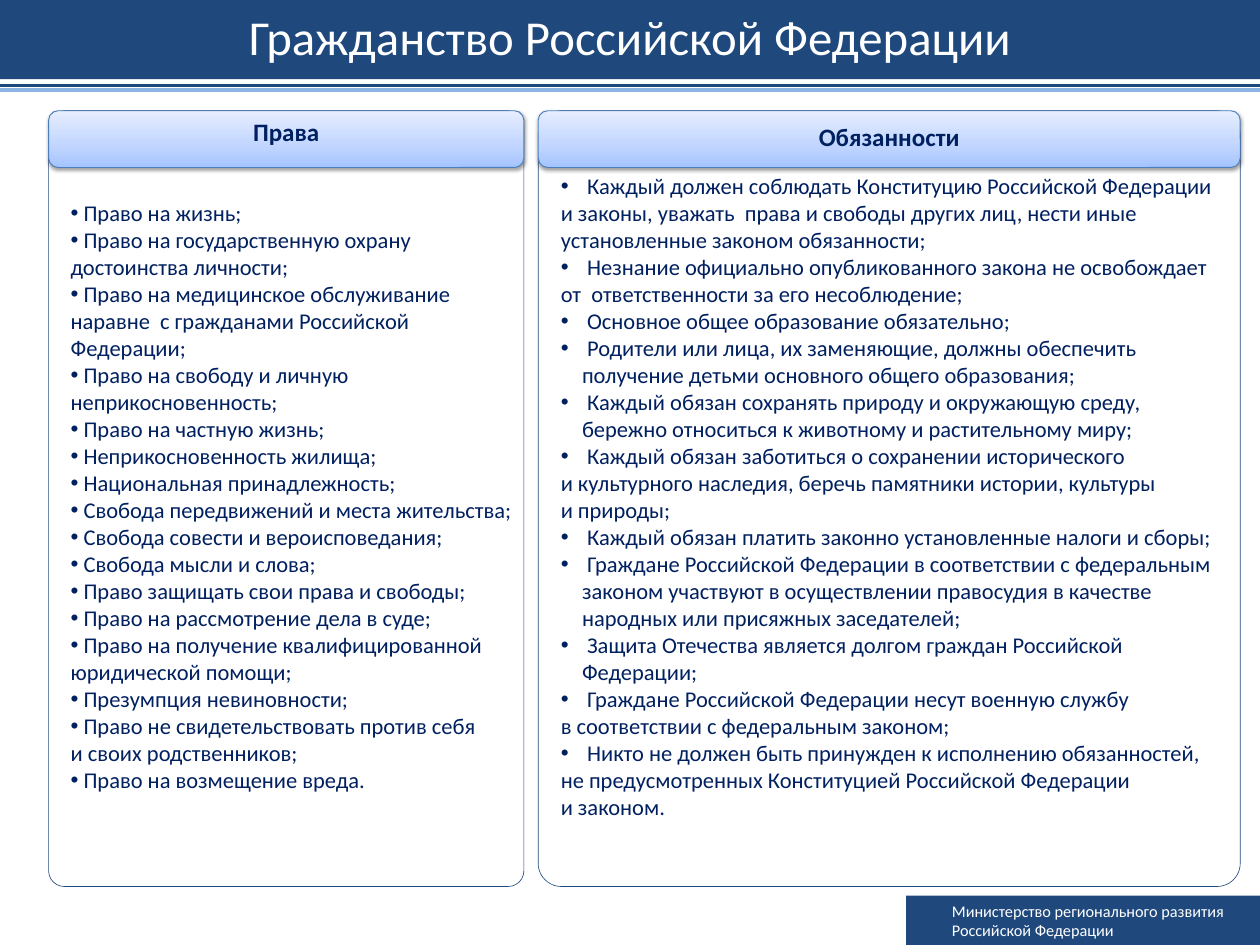
from lxml import etree
from pptx import Presentation
from pptx.dml.color import RGBColor
from pptx.enum.shapes import MSO_CONNECTOR, MSO_SHAPE
from pptx.enum.text import MSO_ANCHOR, MSO_AUTO_SIZE, PP_ALIGN
from pptx.oxml.ns import qn
from pptx.util import Pt

CENTER, LEFT = PP_ALIGN.CENTER, PP_ALIGN.LEFT
MIDDLE, TOP = MSO_ANCHOR.MIDDLE, MSO_ANCHOR.TOP
RECTANGLE, ROUNDED = MSO_SHAPE.RECTANGLE, MSO_SHAPE.ROUNDED_RECTANGLE

FONT = "Calibri"
COLORS = {
    "navy": "1F497D", "sky": "8EB4E3", "text": "002060", "white": "FFFFFF",
    "header_line": "4B7EBC", "shadow": "000000",
}
HEADER_GRADIENT = [(0, "A4C4FF"), (35, "BFD4FF"), (100, "E6EEFF")]

# Content: list items are (text, has bullet)
TITLE = "Гражданство Российской Федерации"
MINISTRY = "Министерство регионального развития Российской Федерации"
RIGHTS = [
    ("Право на жизнь;", True),
    ("Право на государственную охрану достоинства личности;", True),
    ("Право на медицинское обслуживание наравне  с гражданами Российской Федерации;", True),
    ("Право на свободу и личную неприкосновенность;", True),
    ("Право на частную жизнь;", True),
    ("Неприкосновенность жилища;", True),
    ("Национальная принадлежность;", True),
    ("Свобода передвижений и места жительства;", True),
    ("Свобода совести и вероисповедания;", True),
    ("Свобода мысли и слова;", True),
    ("Право защищать свои права и свободы;", True),
    ("Право на рассмотрение дела в суде;", True),
    ("Право на получение квалифицированной юридической помощи;", True),
    ("Презумпция невиновности;", True),
    ("Право не свидетельствовать против себя", True),
    ("и своих родственников;", False),
    ("Право на возмещение вреда.", True),
]
DUTIES = [
    ("Каждый должен соблюдать Конституцию Российской Федерации", True),
    ("и законы, уважать  права и свободы других лиц, нести иные установленные законом обязанности;", False),
    ("Незнание официально опубликованного закона не освобождает", True),
    ("от  ответственности за его несоблюдение;", False),
    ("Основное общее образование обязательно;", True),
    ("Родители или лица, их заменяющие, должны обеспечить получение детьми основного общего образования;", True),
    ("Каждый обязан сохранять природу и окружающую среду, бережно относиться к животному и растительному миру;", True),
    ("Каждый обязан заботиться о сохранении исторического", True),
    ("и культурного наследия, беречь памятники истории, культуры", False),
    ("и природы;", False),
    ("Каждый обязан платить законно установленные налоги и сборы;", True),
    ("Граждане Российской Федерации в соответствии с федеральным законом участвуют в осуществлении "
     "правосудия в качестве народных или присяжных заседателей;", True),
    ("Защита Отечества является долгом граждан Российской Федерации;", True),
    ("Граждане Российской Федерации несут военную службу", True),
    ("в соответствии с федеральным законом;", False),
    ("Никто не должен быть принужден к исполнению обязанностей,", True),
    ("не предусмотренных Конституцией Российской Федерации", False),
    ("и законом.", False),
]

# Layout in points
SLIDE_WIDTH, SLIDE_HEIGHT = 1008, 756
PANEL_TOP, PANEL_HEIGHT, HEADER_HEIGHT = 88.6, 620.6, 45.4
COLUMNS = [
    {"header": "Права", "left": 38.9, "width": 380.2, "spacing": 12, "items": RIGHTS,
     "list_box": (49.3, 155.8, 380.2, 540), "hanging": 0},
    {"header": "Обязанности", "left": 430.6, "width": 561.6, "spacing": 19.6, "items": DUTIES,
     "list_box": (441.4, 133.9, 544.3, 560), "hanging": 17},
]
RULES = [(68.4, "navy"), (72, "sky")]


def color(name):
    return RGBColor.from_string(COLORS[name])


def place(shape, left, top, width, height):
    shape.left, shape.top, shape.width, shape.height = map(Pt, (left, top, width, height))


def add_box(slide, kind, box, fill=None, line=None, line_width=0.5, adjustment=None):
    shape = slide.shapes.add_shape(kind, *map(Pt, box))
    shape.shadow.inherit = False
    if adjustment is not None:
        shape.adjustments[0] = adjustment
    if fill:
        shape.fill.solid()
        shape.fill.fore_color.rgb = color(fill)
    else:
        shape.fill.background()
    if line:
        shape.line.color.rgb = color(line)
        shape.line.width = Pt(line_width)
    else:
        shape.line.fill.background()
    return shape


def prepare_frame(shape, anchor=TOP, insets=(7.2, 3.6)):
    frame = shape.text_frame
    frame.word_wrap = True
    frame.auto_size = MSO_AUTO_SIZE.NONE
    frame.vertical_anchor = anchor
    frame.margin_left = frame.margin_right = Pt(insets[0])
    frame.margin_top = frame.margin_bottom = Pt(insets[1])
    return frame


def write(paragraph, text, size=18, tint="text", bold=False, align=LEFT,
          spacing=None, margin=0, indent=0, bullet=False):
    paragraph.alignment = align
    paragraph.space_before = Pt(0)
    if spacing:
        paragraph.line_spacing = Pt(spacing)
    properties = paragraph._p.get_or_add_pPr()
    properties.set("marL", str(Pt(margin)))
    properties.set("indent", str(Pt(indent)))
    if bullet:
        etree.SubElement(properties, qn("a:buFont"), typeface="Arial")
        etree.SubElement(properties, qn("a:buChar"), char="•")
    else:
        etree.SubElement(properties, qn("a:buNone"))
    run = paragraph.add_run()
    run.text = text
    run.font.name, run.font.size, run.font.bold = FONT, Pt(size), bold
    run.font.color.rgb = color(tint)


def style_header(shape):
    shape.fill.gradient()
    shape.fill.gradient_angle = 90
    properties = shape._element.spPr
    stops = properties.find(".//" + qn("a:gsLst"))
    for stop in list(stops):
        stops.remove(stop)
    for position, value in HEADER_GRADIENT:
        stop = etree.SubElement(stops, qn("a:gs"), pos=str(position * 1000))
        etree.SubElement(stop, qn("a:srgbClr"), val=value)
    shadow = etree.SubElement(properties.find(qn("a:effectLst")), qn("a:outerShdw"),
                              blurRad=str(Pt(3.1)), dist=str(Pt(1.6)), dir="5400000", rotWithShape="0")
    tint = etree.SubElement(shadow, qn("a:srgbClr"), val=COLORS["shadow"])
    etree.SubElement(tint, qn("a:alpha"), val="38000")


def main():
    presentation = Presentation()
    presentation.slide_width, presentation.slide_height = Pt(SLIDE_WIDTH), Pt(SLIDE_HEIGHT)
    slide = presentation.slides.add_slide(presentation.slide_layouts[3])
    title, *lists = slide.placeholders

    # Title band and the rules below it
    place(title, 0, 0, SLIDE_WIDTH, 63.4)
    title.fill.solid()
    title.fill.fore_color.rgb = color("navy")
    write(prepare_frame(title, MIDDLE, (10, 5)).paragraphs[0], TITLE,
          size=39, tint="white", align=CENTER, spacing=40.6)
    for height, tint in RULES:
        rule = slide.shapes.add_connector(MSO_CONNECTOR.STRAIGHT, Pt(0), Pt(height), Pt(SLIDE_WIDTH), Pt(height))
        rule.line.color.rgb = color(tint)
        rule.line.width = Pt(3)
        etree.SubElement(rule._element.spPr, qn("a:effectLst"))

    # Columns: outlined panel, header and list
    for column, body in zip(COLUMNS, lists):
        left, width = column["left"], column["width"]
        add_box(slide, ROUNDED, (left, PANEL_TOP, width, PANEL_HEIGHT), line="navy", adjustment=0.033)
        header = add_box(slide, ROUNDED, (left, PANEL_TOP, width, HEADER_HEIGHT),
                         line="header_line", line_width=0.75)
        style_header(header)
        write(prepare_frame(header, MIDDLE, (0, 3.6)).paragraphs[0], column["header"],
              size=20, bold=True, align=CENTER, spacing=column["spacing"])

        place(body, *column["list_box"])
        frame = prepare_frame(body)
        for index, (text, bullet) in enumerate(column["items"]):
            paragraph = frame.add_paragraph() if index else frame.paragraphs[0]
            hanging = column["hanging"] if bullet else 0
            write(paragraph, " " + text if bullet else text,
                  margin=hanging, indent=-hanging, bullet=bullet)

    # Ministry label in the corner
    label = add_box(slide, RECTANGLE, (725, 716.4, 283, 39.6), fill="navy")
    write(prepare_frame(label, MIDDLE).paragraphs[0], MINISTRY, size=13, tint="white", margin=29.5)

    presentation.save("out.pptx")


if __name__ == "__main__":
    main()
